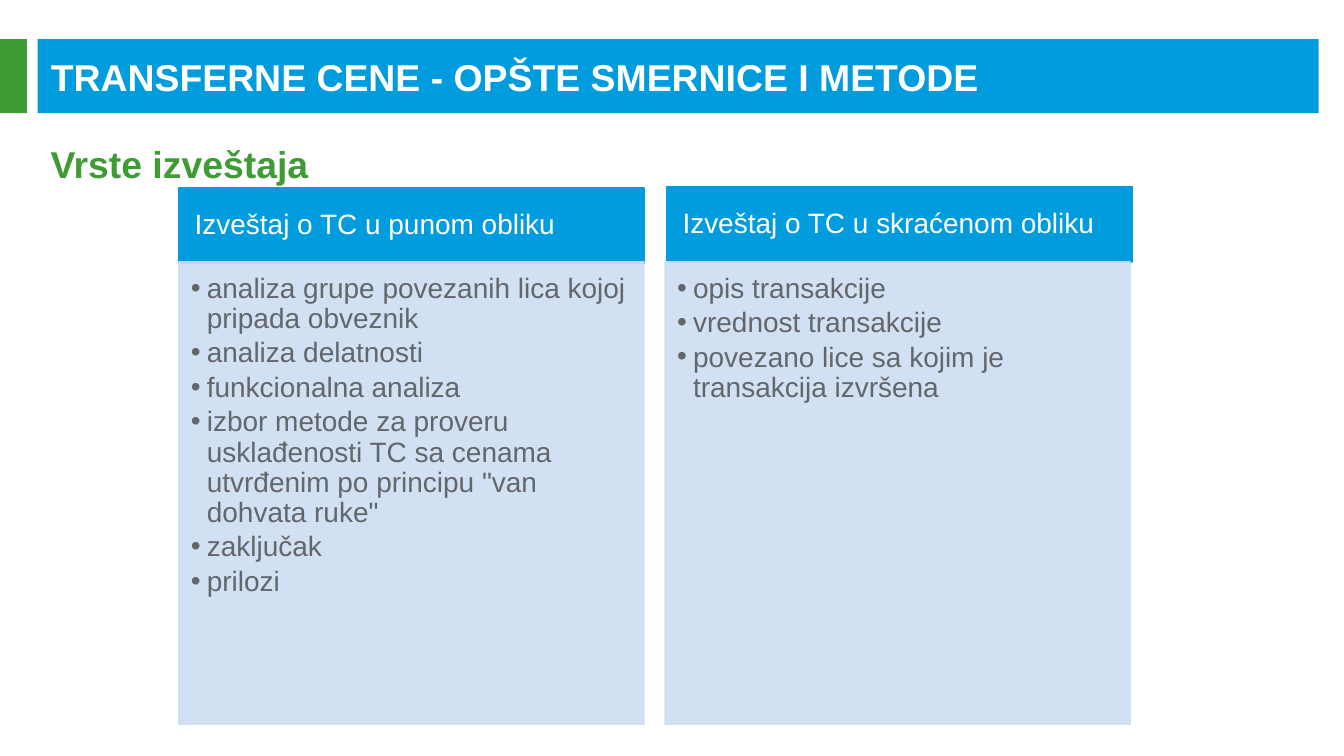
from dataclasses import dataclass

from lxml.etree import SubElement
from pptx import Presentation
from pptx.dml.color import RGBColor
from pptx.enum.shapes import MSO_SHAPE as Preset
from pptx.enum.text import MSO_ANCHOR as Anchor, MSO_AUTO_SIZE as AutoSize, PP_ALIGN as Align
from pptx.oxml.ns import qn
from pptx.util import Cm, Pt

BLUE, GREEN, PALE, GREY, WHITE = "009CDE", "3F9C35", "CCDEF2", "63666A", "FFFFFF"
COLUMN_WIDTH, HEADER_HEIGHT = 8.79, 1.42
BODY_TOP, BODY_HEIGHT = 4.95, 8.74


@dataclass
class Report:
    heading: str
    points: list[str]
    header_left: float
    header_top: float
    body_left: float


REPORTS = [
    Report(
        "Izveštaj o TC u punom obliku",
        [
            "analiza grupe povezanih lica kojoj pripada obveznik",
            "analiza delatnosti",
            "funkcionalna analiza",
            'izbor metode za proveru usklađenosti TC sa cenama utvrđenim po principu "van dohvata ruke"',
            "zaključak",
            "prilozi",
        ],
        3.38, 3.56, 3.38,
    ),
    Report(
        "Izveštaj o TC u skraćenom obliku",
        [
            "opis transakcije",
            "vrednost transakcije",
            "povezano lice sa kojim je transakcija izvršena",
        ],
        12.6, 3.53, 12.57,
    ),
]


def set_color(color_format, value: str) -> None:
    color_format.rgb = RGBColor.from_string(value)


def paint(shape, color: str) -> None:
    shape.fill.solid()
    set_color(shape.fill.fore_color, color)


def make_translucent(shape, percent: int) -> None:
    for color in shape._element.spPr.iter(qn("a:srgbClr")):
        SubElement(color, qn("a:alpha"), val=str(percent * 1000))


def add_block(slide, left: float, top: float, width: float, height: float,
              color: str, outlined: bool = False):
    block = slide.shapes.add_shape(Preset.RECTANGLE, Cm(left), Cm(top), Cm(width), Cm(height))
    block.shadow.inherit = False
    paint(block, color)
    if outlined:
        set_color(block.line.color, color)
        block.line.width = Pt(0.85)
    else:
        block.line.fill.background()
    return block


def write(shape, lines: list[str], *, size: float, color: str, bold: bool = False,
          anchor=Anchor.TOP, margins=(0.25, 0.13, 0.25, 0.13),
          spacing: float = 1.0, after: float = 0, bulleted: bool = False) -> None:
    frame = shape.text_frame
    frame.word_wrap = True
    frame.auto_size = AutoSize.NONE
    frame.vertical_anchor = anchor
    frame.margin_left, frame.margin_top, frame.margin_right, frame.margin_bottom = map(Cm, margins)
    for index, line in enumerate(lines):
        paragraph = frame.add_paragraph() if index else frame.paragraphs[0]
        if bulleted:
            properties = paragraph._p.get_or_add_pPr()
            properties.set("marL", str(Cm(0.3)))
            properties.set("indent", str(-Cm(0.3)))
            SubElement(properties, qn("a:buFont"), typeface="Arial")
            SubElement(properties, qn("a:buChar"), char="•")
        paragraph.alignment = Align.LEFT
        paragraph.line_spacing = spacing
        paragraph.space_after = Pt(after)
        run = paragraph.add_run()
        run.text = line
        run.font.name = "Arial"
        run.font.size = Pt(size)
        run.font.bold = bold
        set_color(run.font.color, color)


def add_report(slide, report: Report) -> None:
    header = add_block(slide, report.header_left, report.header_top,
                       COLUMN_WIDTH, HEADER_HEIGHT, BLUE, outlined=True)
    write(header, [report.heading], size=15, color=WHITE, anchor=Anchor.MIDDLE,
          margins=(0.3, 0.18, 0.3, 0.18), spacing=0.9)
    body = add_block(slide, report.body_left, BODY_TOP,
                     COLUMN_WIDTH, BODY_HEIGHT, PALE, outlined=True)
    make_translucent(body, 90)
    write(body, report.points, size=15, color=GREY, margins=(0.23, 0.23, 0.3, 0.33),
          spacing=0.9, after=2.25, bulleted=True)


def main() -> None:
    deck = Presentation()
    deck.slide_width, deck.slide_height = Cm(25.4), Cm(14.29)
    slide = deck.slides.add_slide(deck.slide_layouts[5])

    title = slide.shapes.title
    title.left, title.top, title.width, title.height = map(Cm, (0.71, 0.74, 24.21, 1.4))
    paint(title, BLUE)
    write(title, ["TRANSFERNE CENE - OPŠTE SMERNICE I METODE"],
          size=20, color=WHITE, bold=True, anchor=Anchor.MIDDLE)
    add_block(slide, 0, 0.74, 0.51, 1.4, GREEN)

    subtitle = slide.shapes.add_textbox(Cm(0.71), Cm(2.54), Cm(24.21), Cm(1.35))
    write(subtitle, ["Vrste izveštaja"], size=20, color=GREEN, bold=True)

    for report in REPORTS:
        add_report(slide, report)

    deck.save("out.pptx")


if __name__ == "__main__":
    main()
